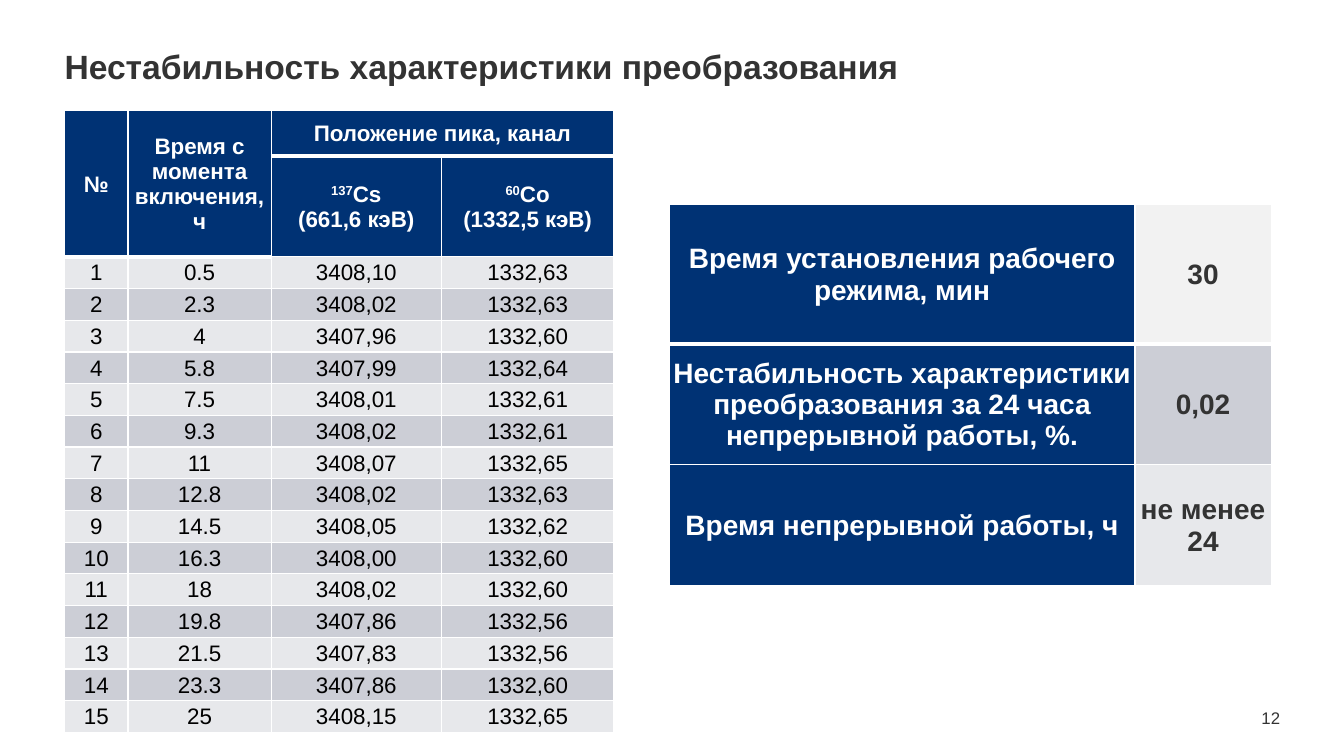
from lxml.etree import SubElement
from pptx import Presentation
from pptx.dml.color import RGBColor
from pptx.enum.text import MSO_ANCHOR, PP_ALIGN
from pptx.oxml.ns import qn
from pptx.util import Inches, Pt

COLORS = {
    "navy": "003274",
    "white": "FFFFFF",
    "text": "333333",
    "black": "000000",
    "light": "E7E8EB",
    "dark": "CCCED6",
    "pale": "F2F2F2",
}
GRID_COLUMNS, GRID_ROWS = 133.33, 75

TIMES = ["0.5", "2.3", "4", "5.8", "7.5", "9.3", "11", "12.8",
         "14.5", "16.3", "18", "19.8", "21.5", "23.3", "25"]
CESIUM_PEAKS = ["3408,10", "3408,02", "3407,96", "3407,99", "3408,01",
                "3408,02", "3408,07", "3408,02", "3408,05", "3408,00",
                "3408,02", "3407,86", "3407,83", "3407,86", "3408,15"]
COBALT_PEAKS = ["1332,63", "1332,63", "1332,60", "1332,64", "1332,61",
                "1332,61", "1332,65", "1332,63", "1332,62", "1332,60",
                "1332,60", "1332,56", "1332,56", "1332,60", "1332,65"]
PEAK_HEADER = [
    ["№", "Время с момента включения, ч", "Положение пика, канал", ""],
    ["", "", "^137^Cs\n(661,6 кэВ)", "^60^Co\n(1332,5 кэВ)"],
]
SUMMARY = [
    ("Время установления рабочего режима, мин", "30", "pale"),
    ("Нестабильность характеристики преобразования за 24 часа "
     "непрерывной работы, %.", "0,02", "dark"),
    ("Время непрерывной работы, ч", "не менее 24", "light"),
]


def grid(count):
    """Length of a number of grid cells, each a tenth of an inch."""
    return Inches(count / 10)


def write(frame, text, size, color, bold=False, align=PP_ALIGN.LEFT,
          anchor=MSO_ANCHOR.MIDDLE):
    """Fill a frame line by line; text between ^ marks is superscript."""
    frame.word_wrap = True
    frame.vertical_anchor = anchor
    for index, line in enumerate(text.split("\n")):
        para = frame.add_paragraph() if index else frame.paragraphs[0]
        para.alignment = align
        for part, words in enumerate(line.split("^")):
            if not words:
                continue
            span = para.add_run()
            span.text = words
            span.font.name = "Arial"
            span.font.size = Pt(size)
            span.font.bold = bold
            span.font.color.rgb = RGBColor.from_string(COLORS[color])
            if part % 2:
                span.font._element.set("baseline", "30000")


def set_insets(frame, bottom=0):
    frame.margin_left = frame.margin_right = frame.margin_top = 0
    frame.margin_bottom = grid(bottom)


def draw_borders(cell, bottom):
    properties = cell._tc.get_or_add_tcPr()
    for side, width in (("L", 1), ("R", 1), ("T", 1), ("B", bottom)):
        line = SubElement(properties, qn(f"a:ln{side}"), w=str(Pt(width)))
        fill = SubElement(line, qn("a:solidFill"))
        SubElement(fill, qn("a:srgbClr"), val=COLORS["white"])


def fill_cell(cell, text, fill, size, color, bold, bottom=1):
    cell.margin_left = cell.margin_right = cell.margin_top = grid(0.1)
    cell.margin_bottom = 0
    draw_borders(cell, bottom)
    cell.fill.solid()
    cell.fill.fore_color.rgb = RGBColor.from_string(COLORS[fill])
    write(cell.text_frame, text, size, color, bold, PP_ALIGN.CENTER)
    cell.vertical_anchor = MSO_ANCHOR.MIDDLE


def add_grid_table(slide, left, top, widths, heights):
    box = slide.shapes.add_table(
        len(heights), len(widths), grid(left), grid(top),
        grid(sum(widths)), grid(sum(heights)))
    for column, width in zip(box.table.columns, widths):
        column.width = grid(width)
    for row, height in zip(box.table.rows, heights):
        row.height = grid(height)
    return box.table


def add_title(slide, left, top, width, height):
    title = slide.shapes.title
    title.left, title.top = grid(left), grid(top)
    title.width, title.height = grid(width), grid(height)
    set_insets(title.text_frame, bottom=0.4)
    write(title.text_frame, "Нестабильность характеристики преобразования",
          size=24, color="text", bold=True)


def add_peak_table(slide, left, top):
    body = list(zip(map(str, range(1, len(TIMES) + 1)),
                    TIMES, CESIUM_PEAKS, COBALT_PEAKS))
    body_height = 47.2
    heights = [4.5, 4.5] + [body_height / len(body)] * len(body)
    table = add_grid_table(slide, left, top, [6.3, 14.2, 16.9, 17.1], heights)
    for column in (0, 1):
        table.cell(0, column).merge(table.cell(1, column))
    table.cell(0, 2).merge(table.cell(0, 3))
    for row, values in enumerate(PEAK_HEADER + body):
        header = row < len(PEAK_HEADER)
        fill = "navy" if header else ("light", "dark")[row % 2]
        for column, text in enumerate(values):
            cell = table.cell(row, column)
            if not cell.is_spanned:
                fill_cell(cell, text, fill, size=16, bold=header,
                          color="white" if header else "black",
                          bottom=1 if row else 3)


def add_summary_table(slide, left, top):
    table = add_grid_table(slide, left, top, [46.2, 13.5], [13.8, 12, 12])
    for row, (label, value, fill) in enumerate(SUMMARY):
        bottom = 1 if row else 3
        fill_cell(table.cell(row, 0), label, "navy", size=20, color="white",
                  bold=True, bottom=bottom)
        fill_cell(table.cell(row, 1), value, fill, size=20, color="text",
                  bold=True, bottom=bottom)


def add_page_number(slide, left, top, width, height):
    box = slide.shapes.add_textbox(
        grid(left), grid(top), grid(width), grid(height))
    set_insets(box.text_frame)
    write(box.text_frame, "12", size=12, color="text",
          align=PP_ALIGN.RIGHT, anchor=MSO_ANCHOR.BOTTOM)
    box.text_frame.paragraphs[0].line_spacing = 0.9


def main():
    deck = Presentation()
    deck.slide_width = grid(GRID_COLUMNS)
    deck.slide_height = grid(GRID_ROWS)
    slide = deck.slides.add_slide(deck.slide_layouts.get_by_name("Title Only"))
    add_title(slide, 6.4, 3.2, 89.8, 7.1)
    add_peak_table(slide, 6.4, 11)
    add_summary_table(slide, 6.64 * 10, 20.3)
    add_page_number(slide, 122, 69.8, 5, 2.4)
    deck.save("out.pptx")


if __name__ == "__main__":
    main()
